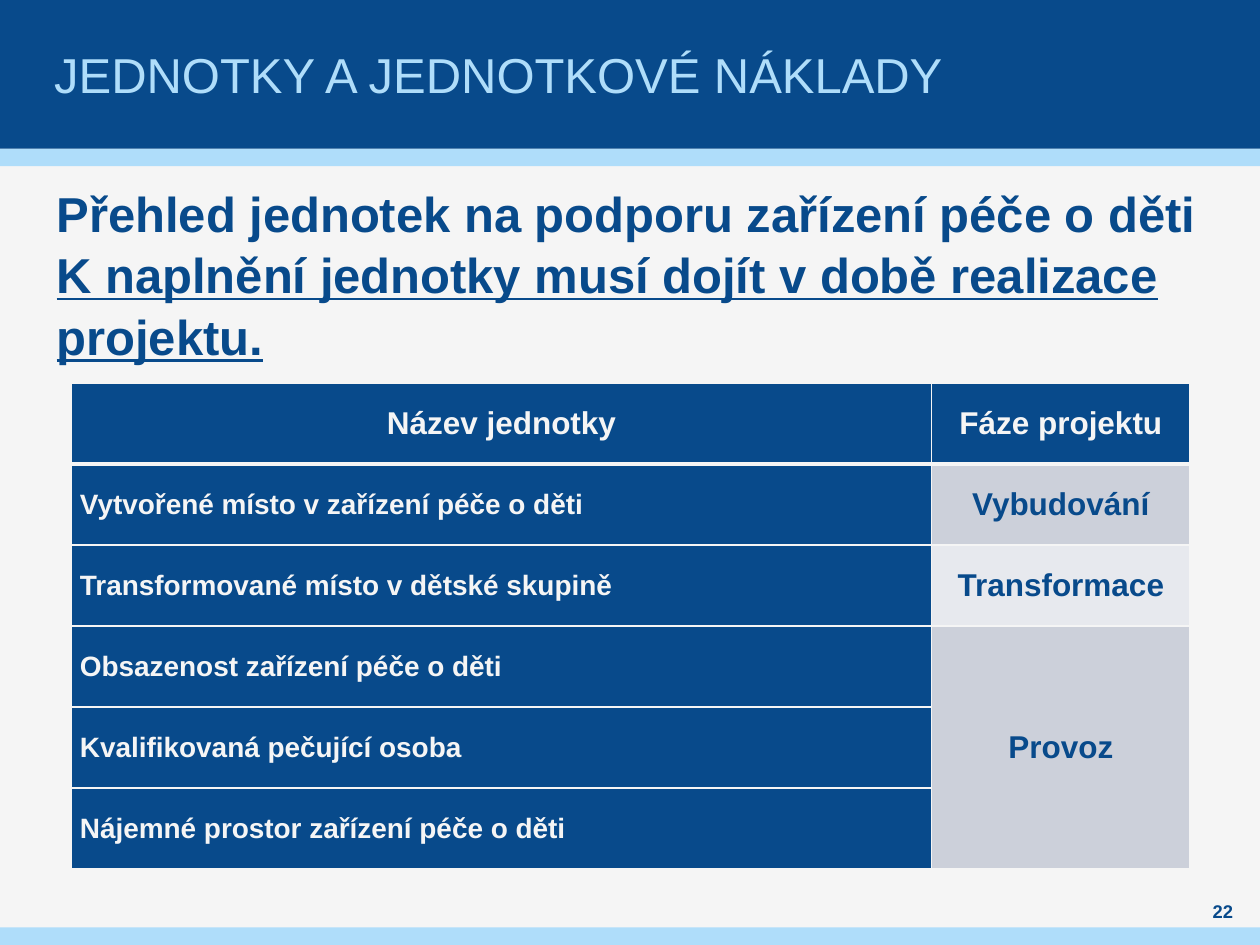
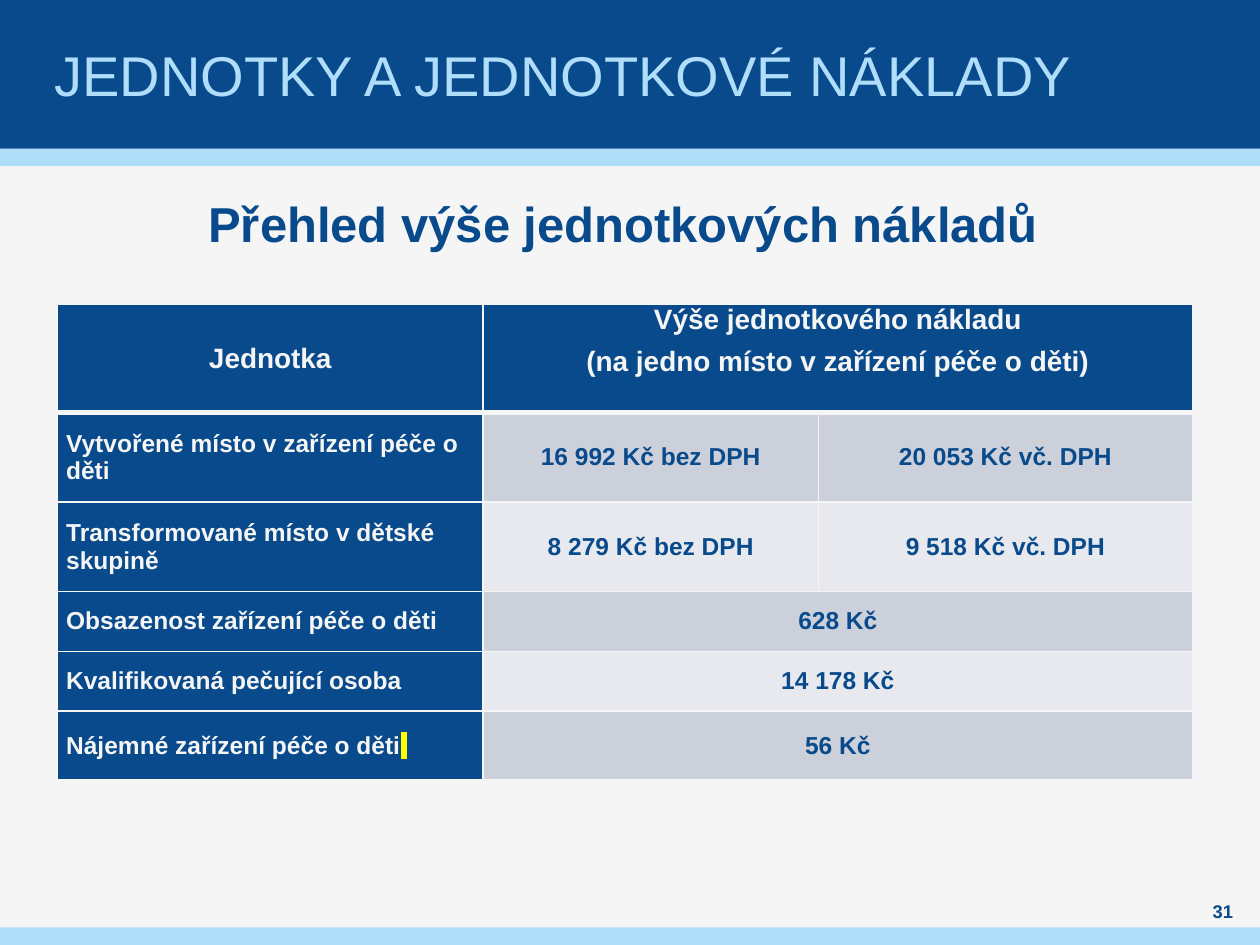
from lxml.etree import SubElement as Sub
from pptx import Presentation
from pptx.dml.color import RGBColor
from pptx.enum.shapes import MSO_SHAPE as Shape
from pptx.enum.text import MSO_ANCHOR as Anchor, PP_ALIGN as Align
from pptx.oxml.ns import qn
from pptx.util import Inches, Pt

# Lengths count the cells of a grid of 100 columns by 75 rows.
COLS, ROWS = 100, 75
FONT = "Arial"
NAVY, SKY, PAPER = "084A8B", "AFDDFA", "F5F5F5"
TINTS = "E7E9EE", "CCD0DA"
YELLOW = "FFFF00"
TITLE = "JEDNOTKY A JEDNOTKOVÉ NÁKLADY"


def grid(*cells):
    return [Inches(n / 10) for n in cells]


def color(target, hue):
    target.rgb = RGBColor.from_string(hue)


def paint(fill, hue):
    fill.solid()
    color(fill.fore_color, hue)


def add_run(para, text, size, hue, bold=True, under=None, mark=None):
    run = para.add_run()
    run.text = text
    font = run.font
    font.size, font.bold, font.underline = Pt(size), bold, under
    color(font.color, hue)
    if mark:
        light = Sub(font._element, qn("a:highlight"))
        Sub(light, qn("a:srgbClr"), val=mark)
    font.name = FONT


def add_band(slide, top, high, hue):
    band = slide.shapes.add_shape(Shape.RECTANGLE, *grid(0, top, COLS, high))
    band.shadow.inherit = False
    paint(band.fill, hue)
    band.line.fill.background()


def add_text(slide, place, align=Align.LEFT, inset=(1, 0.5), anchor=Anchor.TOP):
    """Return the paragraph of a new, still empty text box."""
    frame = slide.shapes.add_textbox(*grid(*place)).text_frame
    frame.word_wrap = True
    frame.vertical_anchor = anchor
    side, end = grid(*inset)
    frame.margin_left = frame.margin_right = side
    frame.margin_top = frame.margin_bottom = end
    para = frame.paragraphs[0]
    para.alignment = align
    return para


def add_page(deck, number, size):
    """Add a slide with its bands, title and page number."""
    slide = deck.slides.add_slide(deck.slide_layouts[6])
    paint(slide.background.fill, PAPER)
    add_band(slide, 11.8, 1.4, SKY)
    add_band(slide, 0, 11.8, NAVY)
    add_band(slide, ROWS - 1.4, 1.4, SKY)
    para = add_text(slide, (3.9, 0, 92.1, 11.8), Align.LEFT, (0.4, 0), Anchor.MIDDLE)
    add_run(para, TITLE, size, SKY, False)
    para = add_text(slide, (94.5, 71.3, 5.1, 2), Align.CENTER, (0, 0), Anchor.MIDDLE)
    add_run(para, number, 10.5, NAVY)
    return slide


def add_edges(cell, row):
    """Rule a cell, with a thick line between the head and the body."""
    props = cell._tc.get_or_add_tcPr()
    thick = {0: "B", 1: "T"}.get(row)
    for spot, side in enumerate("LRTB"):
        wide = Pt(3 if side == thick else 1)
        edge = Sub(props, qn(f"a:ln{side}"), w=str(wide))
        Sub(Sub(edge, qn("a:solidFill")), qn("a:srgbClr"), val=PAPER)
        props.insert(spot, edge)


def fill_cell(cell, text, size, hue, align):
    cell.vertical_anchor = Anchor.MIDDLE
    cell.margin_left, cell.margin_right = grid(0.7, 0.7)
    cell.margin_top = cell.margin_bottom = 0
    for i, line in enumerate(text.split("\n") if text else []):
        frame = cell.text_frame
        para = frame.add_paragraph() if i else frame.paragraphs[0]
        para.alignment = align
        para.space_after = Pt(3)
        if i:
            para.space_before = Pt(3)
        add_run(para, line, size, hue)


def add_table(slide, spot, wides, highs, rows, sizes, spans):
    """Sizes are for head, labels and values; spans are pairs of corners."""
    place = grid(*spot, sum(wides), sum(highs))
    table = slide.shapes.add_table(len(highs), len(wides), *place).table
    for col, wide in zip(table.columns, grid(*wides)):
        col.width = wide
    for row, high in zip(table.rows, grid(*highs)):
        row.height = high
    head, label, value = sizes
    for r, row in enumerate(rows):
        for c, text in enumerate(row):
            cell = table.cell(r, c)
            dark = r == 0 or c == 0
            size = head if r == 0 else label if c == 0 else value
            align = Align.LEFT if r and c == 0 else Align.CENTER
            paint(cell.fill, NAVY if dark else TINTS[r % 2])
            fill_cell(cell, text, size, PAPER if dark else NAVY, align)
            add_edges(cell, r)
    for start, end in spans:
        table.cell(*start).merge(table.cell(*end))
    return table


def add_units(deck):
    slide = add_page(deck, "22", 28)
    para = add_text(slide, (3.5, 13.9, 92.9, 15.1))
    para.line_spacing = 1.04
    add_run(para, "Přehled jednotek na podporu zařízení péče o děti ", 28, NAVY)
    add_run(para, "K naplnění jednotky musí dojít v době realizace projektu.",
            28, NAVY, under=True)
    rows = [
        ("Název jednotky", "Fáze projektu"),
        ("Vytvořené místo v zařízení péče o děti", "Vybudování"),
        ("Transformované místo v dětské skupině", "Transformace"),
        ("Obsazenost zařízení péče o děti", "Provoz"),
        ("Kvalifikovaná pečující osoba", ""),
        ("Nájemné prostor zařízení péče o děti", ""),
    ]
    add_table(slide, (5.65, 30.4), (68.3, 20.5), [6.43] * 6, rows,
              (18, 16, 18), [((3, 1), (5, 1))])


def add_costs(deck):
    slide = add_page(deck, "31", 32)
    para = add_text(slide, (8.9, 14.7, 81.1, 5.7), Align.CENTER)
    para.line_spacing = 1.04
    add_run(para, "Přehled výše jednotkových nákladů", 28, NAVY)
    rows = [
        ("Jednotka", "Výše jednotkového nákladu\n"
                     "(na jedno místo v zařízení péče o děti)", ""),
        ("Vytvořené místo v zařízení péče o děti",
         "16 992 Kč bez DPH", "20 053 Kč vč. DPH"),
        ("Transformované místo v dětské skupině",
         "8 279 Kč bez DPH", "9 518 Kč vč. DPH"),
        ("Obsazenost zařízení péče o děti", "628 Kč", ""),
        ("Kvalifikovaná pečující osoba", "14 178 Kč", ""),
        ("Nájemné zařízení péče o děti", "56 Kč", ""),
    ]
    spans = [((r, 1), (r, 2)) for r in (0, 3, 4, 5)]
    table = add_table(slide, (4.55, 24.15), (33.8, 26.6, 29.7),
                      (8.6, 7.1, 7.1, 4.75, 4.75, 5.45), rows, (16, 14, 14), spans)
    table.cell(0, 1).vertical_anchor = Anchor.TOP
    rent = table.cell(5, 0).text_frame.paragraphs[0]
    add_run(rent, " ", 14, PAPER, mark=YELLOW)


def main():
    deck = Presentation()
    deck.slide_width, deck.slide_height = grid(COLS, ROWS)
    add_units(deck)
    add_costs(deck)
    deck.save("out.pptx")


if __name__ == "__main__":
    main()
